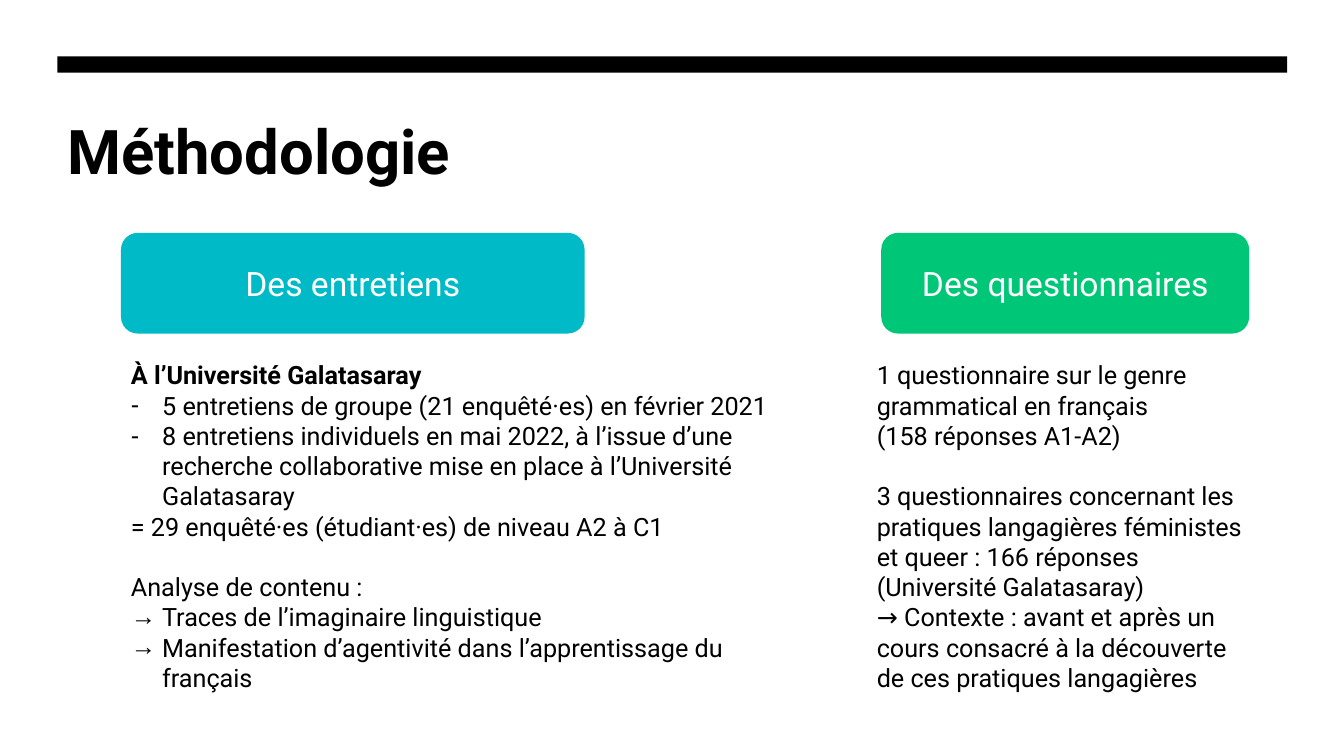
"""Build the methodology slide: two coloured headings, each above its details."""
import pptx
import pptx.dml.color
import pptx.enum.shapes
import pptx.enum.text
import pptx.oxml
import pptx.oxml.ns
import pptx.util

COLOURS = {"ink": "000000", "paper": "FFFFFF", "interviews": "00BAC8", "surveys": "00C777"}
FONT = "Roboto"
BLANK_LINE = pptx.util.Pt(21.6)
HANGING = pptx.util.Inches(0.31)

presentation = pptx.Presentation()
presentation.slide_width = pptx.util.Inches(13.33)
presentation.slide_height = pptx.util.Inches(7.5)
slide = presentation.slides.add_slide(presentation.slide_layouts[6])
column = presentation.slide_width / 100
row = presentation.slide_height / 100


def add_box(kind, left, top, width, height, fill=None):
    """Add a preset shape, or a text box when kind is None, on the 100 by 100 grid."""
    place = [round(length) for length in (left * column, top * row, width * column, height * row)]
    if kind is None:
        shape = slide.shapes.add_textbox(*place)
    else:
        shape = slide.shapes.add_shape(kind, *place)
        shape.shadow.inherit = False
        shape.fill.solid()
        shape.fill.fore_color.rgb = pptx.dml.color.RGBColor.from_string(COLOURS[fill])
        shape.line.fill.background()
    shape.text_frame.word_wrap = True
    return shape


def write(paragraph, text, size, colour="ink", bold=False, bullet=None):
    """Fill one paragraph, with a hanging bullet if one is given."""
    paragraph.text = text
    if bullet:
        properties = paragraph._p.get_or_add_pPr()
        properties.set("marL", str(HANGING))
        properties.set("indent", str(-HANGING))
        namespace = pptx.oxml.ns.nsdecls("a")
        for tag in ('buFont {} typeface="Arial"', f'buChar {{}} char="{bullet}"'):
            properties.append(pptx.oxml.parse_xml(f"<a:{tag.format(namespace)}/>"))
    paragraph.font.name = FONT
    paragraph.font.size = pptx.util.Pt(size)
    paragraph.font.bold = bold
    paragraph.font.color.rgb = pptx.dml.color.RGBColor.from_string(COLOURS[colour])


shapes = pptx.enum.shapes.MSO_SHAPE
add_box(shapes.RECTANGLE, 4.28, 7.47, 91.5, 2.13, "ink")
title = add_box(None, 4.28, 14.27, 91.5, 21.33)
write(title.text_frame.paragraphs[0], "Méthodologie", 44, bold=True)

headings = [
    ("Des entretiens", 9, 34.5, "interviews"),
    ("Des questionnaires", 65.57, 27.38, "surveys"),
]
for text, left, width, fill in headings:
    heading = add_box(shapes.ROUNDED_RECTANGLE, left, 30.8, width, 13.33, fill)
    heading.text_frame.vertical_anchor = pptx.enum.text.MSO_ANCHOR.MIDDLE
    paragraph = heading.text_frame.paragraphs[0]
    paragraph.alignment = pptx.enum.text.PP_ALIGN.CENTER
    write(paragraph, text, 24, "paper")

interview_lines = [
    ("À l’Université Galatasaray", {"bold": True}),
    ("5 entretiens de groupe (21 enquêté·es) en février 2021", {"bullet": "-"}),
    ("8 entretiens individuels en mai 2022, à l’issue d’une recherche collaborative "
     "mise en place à l’Université Galatasaray", {"bullet": "-"}),
    ("= 29 enquêté·es (étudiant·es) de niveau A2 à C1", {}),
    ("Analyse de contenu :", {}),
    ("Traces de l’imaginaire linguistique", {"bullet": "→"}),
    ("Manifestation d’agentivité dans l’apprentissage du français", {"bullet": "→"}),
]
survey_lines = [
    ("1 questionnaire sur le genre grammatical en français\v(158 réponses A1-A2)", {}),
    ("3 questionnaires concernant les pratiques langagières féministes et queer : "
     "166 réponses", {}),
    ("(Université Galatasaray)", {}),
    ("→ Contexte : avant et après un cours consacré à la découverte de ces pratiques "
     "langagières", {}),
]
details = [
    (9, 52.74, 41.73, interview_lines, 4),
    (64.5, 29.4, 49.87, survey_lines, 1),
]
for left, width, height, lines, second_block in details:
    frame = add_box(None, left, 46.93, width, height).text_frame
    for index, (text, style) in enumerate(lines):
        paragraph = frame.add_paragraph() if index else frame.paragraphs[0]
        if index == second_block:
            paragraph.space_before = BLANK_LINE
        write(paragraph, text, 18, **style)

presentation.save("out.pptx")
